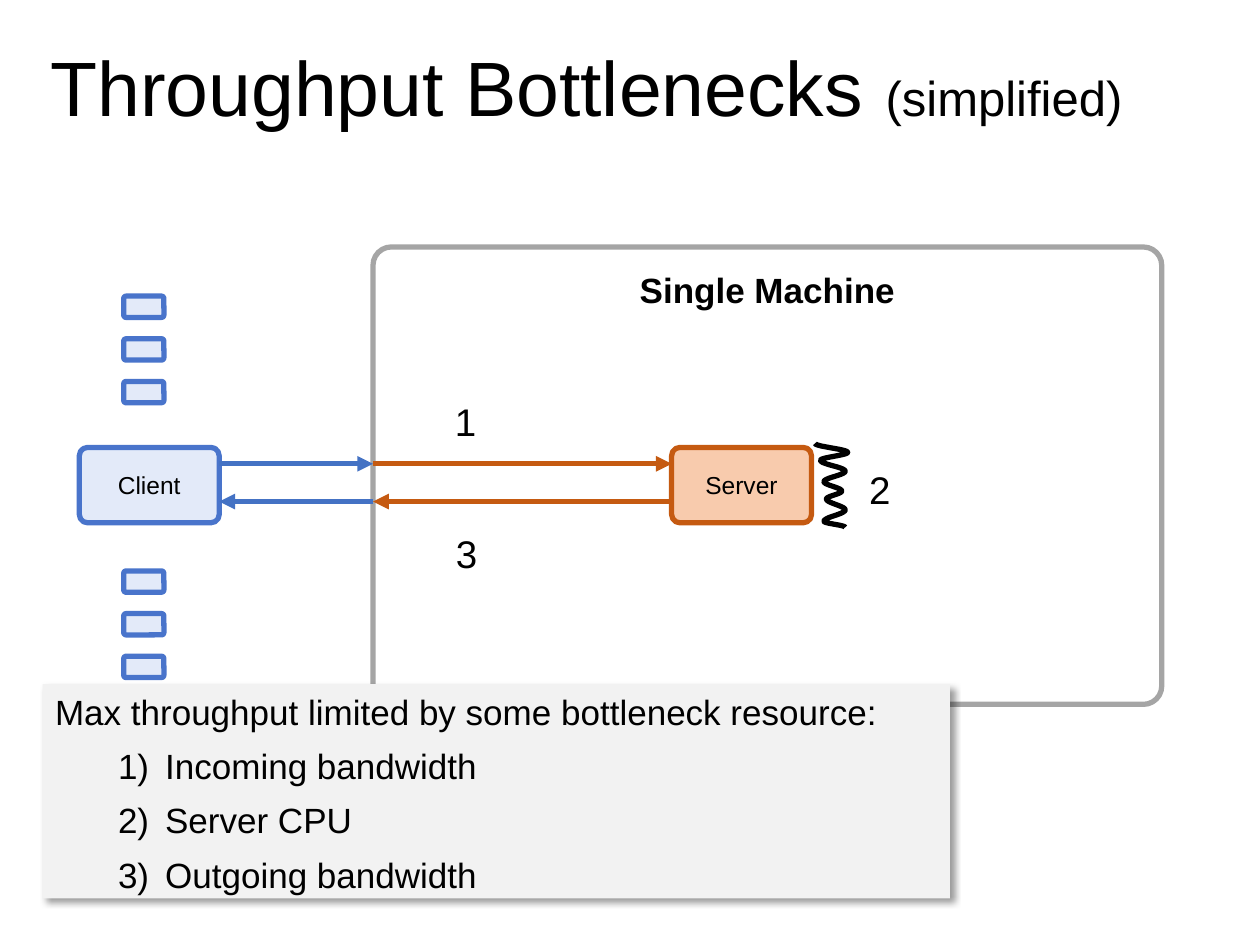
from math import cos, pi

from pptx import Presentation
from pptx.dml.color import RGBColor
from pptx.enum.shapes import MSO_CONNECTOR, MSO_SHAPE
from pptx.enum.text import MSO_ANCHOR, MSO_AUTO_SIZE, PP_ALIGN
from pptx.oxml.ns import qn
from pptx.util import Cm, Pt
from lxml.etree import SubElement

COLORS = {
    "text": "000000", "client_fill": "E3EAF9", "client_line": "4974CB",
    "request": "4472C4", "server_fill": "F8CBAD", "server": "C55A11",
    "machine": "A5A5A5", "note": "F2F2F2",
}
FONT = "Arial"
TITLE = [("Throughput Bottlenecks ", 44), ("(simplified)", 28)]
NOTE = "Max throughput limited by some bottleneck resource:"
BOTTLENECKS = ["Incoming bandwidth", "Server CPU", "Outgoing bandwidth"]
NUMBERS = [("1", 8.92, 7.9), ("2", 17.27, 9.27), ("3", 8.94, 10.57)]

# Layout in centimetres: left, top, width, height
MACHINE = (7.52, 4.98, 15.9, 9.22)
CLIENT = (1.6, 9.02, 2.82, 1.52)
SERVER = (13.54, 9.02, 2.82, 1.52)
NOTE_BOX = (0.86, 13.79, 18.29, 4.32)
MINI_W, MINI_H, MINI_STEP = 0.81, 0.43, 0.86
MINI_TOPS = [5.97, 11.51]
REQUEST_Y, REPLY_Y = 9.35, 10.11
CPU_TURNS = [(16.43, 8.94), (17.09, 9.12), (16.54, 9.28), (17.04, 9.5),
             (16.61, 9.71), (16.97, 9.9), (16.66, 10.06), (17.04, 10.28),
             (16.61, 10.51), (17.04, 10.63)]


def rgb(name):
    return RGBColor.from_string(COLORS[name])


def add_run(p, text, size, bold=False):
    r = p.add_run()
    r.text = text
    r.font.name, r.font.size, r.font.bold = FONT, Pt(size), bold
    r.font.color.rgb = rgb("text")


def paint(sp, fill=None, line=None):
    sp.shadow.inherit = False
    if fill:
        sp.fill.solid()
        sp.fill.fore_color.rgb = rgb(fill)
    else:
        sp.fill.background()
    if line:
        sp.line.color.rgb = rgb(line)
        sp.line.width = Pt(3)
    else:
        sp.line.fill.background()


def add_box(box, fill, line, corner=0.11, label=None, size=14, bold=False):
    sp = slide.shapes.add_shape(MSO_SHAPE.ROUNDED_RECTANGLE, *map(Cm, box))
    sp.adjustments[0] = corner
    paint(sp, fill, line)
    if label:
        p = sp.text_frame.paragraphs[0]
        p.alignment = PP_ALIGN.CENTER
        add_run(p, label, size, bold)
    return sp


def add_arrow(x1, x2, y, color):
    cn = slide.shapes.add_connector(MSO_CONNECTOR.STRAIGHT, Cm(x1), Cm(y), Cm(x2), Cm(y))
    cn.line.color.rgb = rgb(color)
    cn.line.width = Pt(3)
    SubElement(cn.line._get_or_add_ln(), qn("a:tailEnd"), type="triangle")
    SubElement(cn._element.spPr, qn("a:effectLst"))


def add_squiggle(turns):
    """Draw a wave that swings smoothly from each turning point to the next."""
    steps = 10
    points = []
    for (x1, y1), (x2, y2) in zip(turns, turns[1:]):
        for i in range(1, steps + 1):
            t = i / steps
            swing = (1 - cos(pi * t)) / 2
            points.append((Cm(x1 + (x2 - x1) * swing), Cm(y1 + (y2 - y1) * t)))
    builder = slide.shapes.build_freeform(Cm(turns[0][0]), Cm(turns[0][1]))
    builder.add_line_segments(points, close=False)
    paint(builder.convert_to_shape(), line="text")


def add_drop_shadow(sp):
    effects = sp._element.spPr.find(qn("a:effectLst"))
    shadow = SubElement(effects, qn("a:outerShdw"), blurRad=str(Pt(4)),
                        dist=str(Pt(3)), dir="2700000", algn="tl", rotWithShape="0")
    color = SubElement(shadow, qn("a:srgbClr"), val=COLORS["text"])
    SubElement(color, qn("a:alpha"), val="40000")


def add_note():
    sp = slide.shapes.add_shape(MSO_SHAPE.RECTANGLE, *map(Cm, NOTE_BOX))
    paint(sp, "note")
    add_drop_shadow(sp)
    tf = sp.text_frame
    tf.vertical_anchor = MSO_ANCHOR.TOP
    for i, text in enumerate([NOTE] + BOTTLENECKS):
        p = tf.add_paragraph() if i else tf.paragraphs[0]
        p.alignment = PP_ALIGN.LEFT
        p.space_before, p.space_after = Pt(3), Pt(4)
        if i:
            p.level = 1
            pPr = p._p.get_or_add_pPr()
            pPr.set("marL", str(Cm(2.22)))
            pPr.set("indent", str(Cm(-0.95)))
            SubElement(pPr, qn("a:buFont"), typeface=FONT)
            SubElement(pPr, qn("a:buAutoNum"), type="arabicParenR")
        add_run(p, text, 20)


prs = Presentation()
prs.slide_width, prs.slide_height = Cm(25.4), Cm(19.05)
slide = prs.slides.add_slide(prs.slide_layouts[5])

title = slide.shapes.title
title.left, title.top, title.width, title.height = map(Cm, (0.76, 0, 23.88, 3.68))
tf = title.text_frame
tf.auto_size = MSO_AUTO_SIZE.NONE
tf.vertical_anchor = MSO_ANCHOR.MIDDLE
p = tf.paragraphs[0]
p.alignment, p.line_spacing = PP_ALIGN.LEFT, 0.9
for text, size in TITLE:
    add_run(p, text, size)

machine = add_box(MACHINE, None, "machine", 0.04, "Single Machine", 20, True)
machine.text_frame.vertical_anchor = MSO_ANCHOR.TOP
machine.text_frame.margin_top = Cm(0.33)

add_box(CLIENT, "client_fill", "client_line", label="Client")
mini_left = CLIENT[0] + (CLIENT[2] - MINI_W) / 2 - 0.11
for top in MINI_TOPS:
    for i in range(3):
        add_box((mini_left, top + i * MINI_STEP, MINI_W, MINI_H), "client_fill", "client_line")
add_box(SERVER, "server_fill", "server", label="Server")

client_edge, machine_edge, server_edge = CLIENT[0] + CLIENT[2], MACHINE[0], SERVER[0]
for x1, x2, color in [(client_edge, machine_edge, "request"),
                      (machine_edge, server_edge, "server")]:
    add_arrow(x1, x2, REQUEST_Y, color)
    add_arrow(x2, x1, REPLY_Y, color)

add_squiggle(CPU_TURNS)
add_note()

for number, left, top in NUMBERS:
    tb = slide.shapes.add_textbox(Cm(left), Cm(top), Cm(0.94), Cm(1.19))
    tb.text_frame.word_wrap = False
    add_run(tb.text_frame.paragraphs[0], number, 22)

prs.save("out.pptx")
